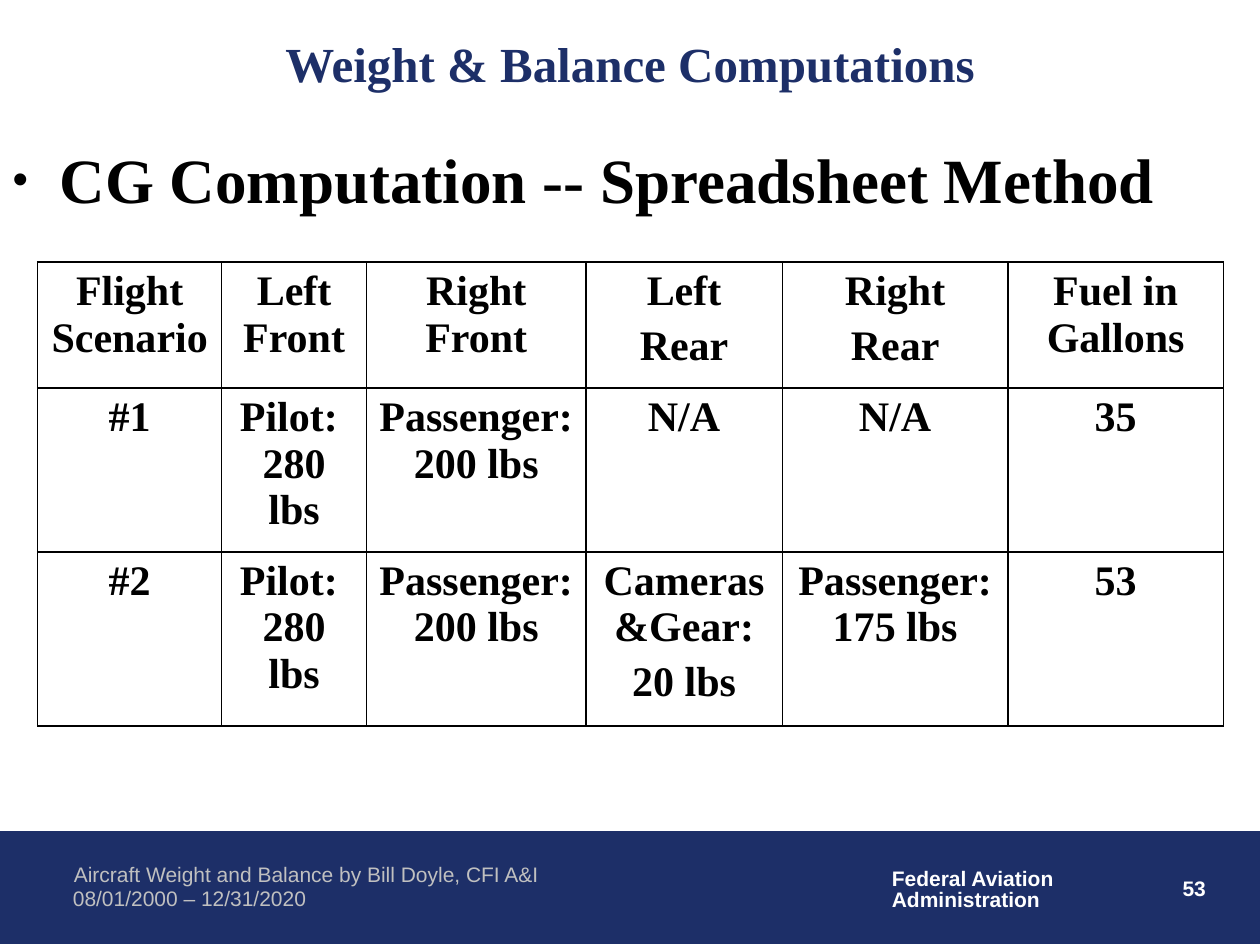
from lxml.etree import SubElement as Sub
from pptx import Presentation
from pptx.dml.color import RGBColor as RGB
from pptx.enum.shapes import MSO_SHAPE as Kind
from pptx.enum.text import MSO_ANCHOR as Anchor, MSO_AUTO_SIZE as Fit, PP_ALIGN as Align
from pptx.oxml.ns import qn
from pptx.util import Cm, Pt

NAVY = RGB(0x1D, 0x2F, 0x68)
WHITE = RGB(0xFF, 0xFF, 0xFF)
BLACK = RGB(0, 0, 0)
GREY = RGB(0xC0, 0xC0, 0xC0)
SERIF, SANS = "Times New Roman", "Arial"

TITLE = "Weight & Balance Computations"
POINT = "CG Computation -- Spreadsheet Method"
PILOT = ["Pilot: \n280 lbs"]
RIDER = ["Passenger: 200 lbs"]
ROWS = [
    [["Flight\nScenario"], ["Left Front"], ["Right\nFront"],
     ["Left", "Rear"], ["Right", "Rear"], ["Fuel in\nGallons"]],
    [["#1"], PILOT, RIDER, ["N/A"], ["N/A"], ["35"]],
    [["#2"], PILOT, RIDER, ["Cameras &Gear:", "20 lbs"],
     ["Passenger: 175 lbs"], ["53"]],
]
WIDTHS = [3.71, 2.92, 4.42, 3.96, 4.55, 4.34]
HEIGHTS = [2.54, 3.3, 3.51]
FOOTER = [
    (["53"], (19.28, 17.53, 5.28, 1.27),
     dict(color=WHITE, bold=True, align=Align.RIGHT)),
    (["Federal Aviation", "Administration"], (17.73, 17.4, 3.81, 1.12),
     dict(color=WHITE, bold=True, line=0.85)),
    (["Aircraft Weight and Balance by Bill Doyle, CFI A&I"],
     (1.24, 17.25, 13.28, 0.76), dict(color=GREY)),
    (["08/01/2000 – 12/31/2020"], (1.22, 17.73, 10.39, 0.76),
     dict(color=GREY)),
]


def write(frame, texts, size=12, face=SANS, color=BLACK, bold=False,
          align=Align.LEFT, line=1.0, gap=0):
    for i, text in enumerate(texts):
        para = frame.paragraphs[0] if i == 0 else frame.add_paragraph()
        para.text = text
        para.alignment = align
        para.line_spacing = line
        para.space_before = Pt(gap if i else 0)
        for run in para.runs:
            font = run.font
            font.size, font.name, font.bold = Pt(size), face, bold
            font.color.rgb = color


def place(shape, left, top, width, height):
    shape.left, shape.top = Cm(left), Cm(top)
    shape.width, shape.height = Cm(width), Cm(height)


def dot(para):
    props = para._p.get_or_add_pPr()
    props.set("marL", str(Cm(0.95)))
    props.set("indent", str(-Cm(0.95)))
    Sub(props, qn("a:buSzPct"), val="70000")
    Sub(props, qn("a:buChar"), char="•")


def frame_cell(cell):
    props = cell._tc.get_or_add_tcPr()
    for side in ("lnL", "lnR", "lnT", "lnB"):
        edge = Sub(props, qn("a:" + side), w=str(Pt(1)))
        paint = Sub(edge, qn("a:solidFill"))
        Sub(paint, qn("a:srgbClr"), val=str(BLACK))
    cell.fill.background()


def add_band(slide):
    band = slide.shapes.add_shape(
        Kind.RECTANGLE, 0, Cm(16.76), Cm(25.4), Cm(2.26))
    band.shadow.inherit = False
    band.fill.solid()
    band.fill.fore_color.rgb = NAVY
    band.line.color.rgb = NAVY
    band.line.width = Pt(0.75)
    for texts, spot, style in FOOTER:
        box = slide.shapes.add_textbox(*map(Cm, spot))
        box.text_frame.word_wrap = True
        write(box.text_frame, texts, **style)


def add_heads(slide):
    title, body = slide.placeholders
    place(title, 0, 0, 25.4, 2.54)
    title.text_frame.vertical_anchor = Anchor.MIDDLE
    write(title.text_frame, [TITLE], size=28, face=SERIF, color=NAVY,
          bold=True, align=Align.CENTER)
    place(body, 0, 2.59, 25.4, 4.01)
    frame = body.text_frame
    frame.auto_size = Fit.NONE
    frame.margin_top = Cm(0.25)
    dot(frame.paragraphs[0])
    write(frame, [POINT], size=36, face=SERIF, bold=True)


def add_grid(slide):
    grid = slide.shapes.add_table(
        len(ROWS), len(WIDTHS), Cm(0.76), Cm(5.28),
        Cm(sum(WIDTHS)), Cm(sum(HEIGHTS))).table
    grid.first_row = grid.horz_banding = False
    for col, width in zip(grid.columns, WIDTHS):
        col.width = Cm(width)
    for row, height, texts in zip(grid.rows, HEIGHTS, ROWS):
        row.height = Cm(height)
        for cell, text in zip(row.cells, texts):
            frame_cell(cell)
            write(cell.text_frame, text, size=24, face=SERIF, bold=True,
                  align=Align.CENTER, gap=4.8)


def main():
    deck = Presentation()
    deck.slide_width, deck.slide_height = Cm(25.4), Cm(19.05)
    slide = deck.slides.add_slide(deck.slide_layouts[1])
    add_band(slide)
    add_heads(slide)
    add_grid(slide)
    deck.save("out.pptx")


if __name__ == "__main__":
    main()
